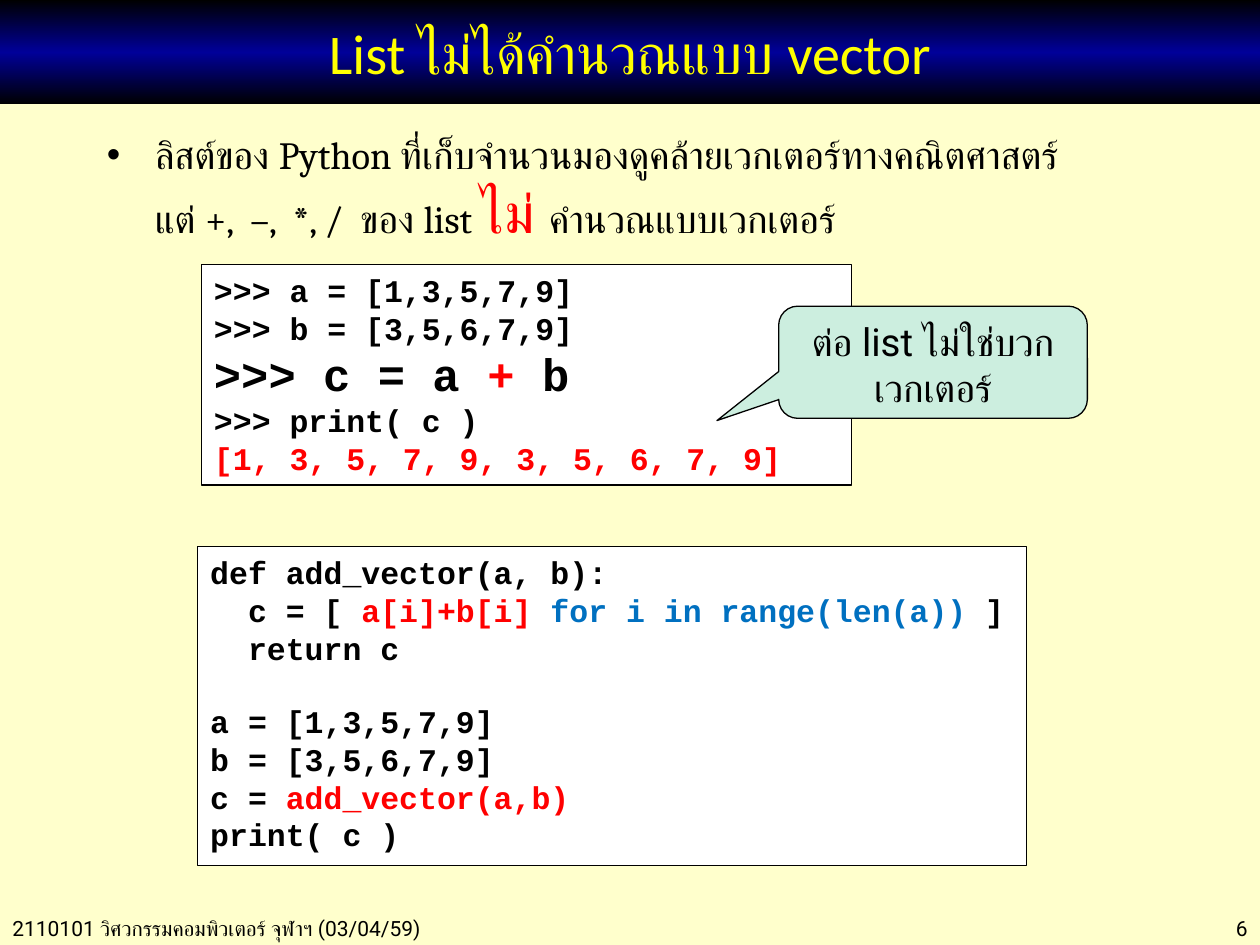
"""Slide showing that adding Python lists does not add them as vectors."""
from copy import deepcopy

from lxml import etree
from pptx import Presentation
from pptx.dml.color import RGBColor
from pptx.enum.shapes import MSO_SHAPE
from pptx.enum.text import MSO_ANCHOR, PP_ALIGN
from pptx.util import Inches, Pt

LEFT, CENTER, RIGHT = PP_ALIGN.LEFT, PP_ALIGN.CENTER, PP_ALIGN.RIGHT
TOP, MIDDLE = MSO_ANCHOR.TOP, MSO_ANCHOR.MIDDLE
RECTANGLE = MSO_SHAPE.RECTANGLE
CALLOUT = MSO_SHAPE.ROUNDED_RECTANGULAR_CALLOUT

BLACK = RGBColor(0x00, 0x00, 0x00)
WHITE = RGBColor(0xFF, 0xFF, 0xFF)
CREAM = RGBColor(0xFF, 0xFF, 0xCC)
NAVY = RGBColor(0x00, 0x00, 0x99)
YELLOW = RGBColor(0xFF, 0xFF, 0x00)
RED = RGBColor(0xFF, 0x00, 0x00)
BLUE = RGBColor(0x00, 0x70, 0xC0)
MINT = RGBColor(0xCC, 0xEE, 0xDF)

WIDTH, HEIGHT = 10, 7.5
FOOTER_TOP, FOOTER_HEIGHT = 7.22, 0.3
CODE_SIZE, BIG_CODE_SIZE, CODE_LINE = 18, 26, 20.4

TITLE = [[("List ไม่ได้คำนวณแบบ vector", YELLOW, 32)]]
POINT = [[
    ("ลิสต์ของ Python ที่เก็บจำนวนมองดูคล้ายเวกเตอร์ทางคณิตศาสตร์\n"
     "แต่ +,  –,  *, /  ของ list ", BLACK, 22),
    ("ไม่ ", RED, 32),
    ("คำนวณแบบเวกเตอร์", BLACK, 22),
]]
CALLOUT_NOTE = [[("ต่อ list ไม่ใช่บวกเวกเตอร์", BLACK, 22)]]
COURSE = [[("2110101 วิศวกรรมคอมพิวเตอร์ จุฬาฯ (03/04/59)", BLACK, 12)]]
PAGE = [[("6", BLACK, 12)]]

CONSOLE = [
    [(">>> a = [1,3,5,7,9]", BLACK, CODE_SIZE)],
    [(">>> b = [3,5,6,7,9]", BLACK, CODE_SIZE)],
    [(">>> c = a ", BLACK, BIG_CODE_SIZE), ("+", RED, BIG_CODE_SIZE),
     (" b", BLACK, BIG_CODE_SIZE)],
    [(">>> print( c )", BLACK, CODE_SIZE)],
    [("[1, 3, 5, 7, 9, 3, 5, 6, 7, 9]", RED, CODE_SIZE)],
]
FUNCTION = [
    [("def add_vector(a, b):", BLACK, CODE_SIZE)],
    [("  c = [ ", BLACK, CODE_SIZE), ("a[i]+b[i] ", RED, CODE_SIZE),
     ("for i in range(len(a))", BLUE, CODE_SIZE), (" ]", BLACK, CODE_SIZE)],
    [("  return c", BLACK, CODE_SIZE)],
]
USAGE = [
    [("a = [1,3,5,7,9]", BLACK, CODE_SIZE)],
    [("b = [3,5,6,7,9]", BLACK, CODE_SIZE)],
    [("c = ", BLACK, CODE_SIZE), ("add_vector(a,b)", RED, CODE_SIZE)],
    [("print( c )", BLACK, CODE_SIZE)],
]


def write(holder, lines, font, align=LEFT, anchor=TOP, bold=False):
    frame = holder.text_frame
    frame.word_wrap = True
    frame.vertical_anchor = anchor
    for number, line in enumerate(lines):
        paragraph = frame.add_paragraph() if number else frame.paragraphs[0]
        paragraph.alignment = align
        for text, color, size in line:
            for row, part in enumerate(text.split("\n")):
                if row:
                    paragraph.add_line_break()
                run = paragraph.add_run()
                run.text = part
                run.font.name = font
                run.font.size = Pt(size)
                run.font.bold = bold
                run.font.color.rgb = color
    return frame.paragraphs


def add_text(slide, box, lines, font, align=LEFT):
    holder = slide.shapes.add_textbox(*map(Inches, box))
    return write(holder, lines, font, align)


def add_panel(slide, kind, box, fill):
    panel = slide.shapes.add_shape(kind, *map(Inches, box))
    panel.shadow.inherit = False
    panel.fill.solid()
    panel.fill.fore_color.rgb = fill
    panel.line.color.rgb = BLACK
    panel.line.width = Pt(0.75)
    return panel


def add_title(slide):
    banner = add_panel(slide, RECTANGLE, (0, 0, WIDTH, 0.83), NAVY)
    banner.line.fill.background()
    banner.fill.gradient()
    banner.fill.gradient_angle = 90
    first = banner.fill.gradient_stops[0]._gs
    first.addnext(deepcopy(first))
    stops = zip(banner.fill.gradient_stops, (0, 0.5, 1), (BLACK, NAVY, BLACK))
    for stop, position, color in stops:
        stop.position = position
        stop.color.rgb = color
    write(banner, TITLE, "Calibri", CENTER, MIDDLE)


def add_bullet(paragraph, indent):
    properties = paragraph._p.get_or_add_pPr()
    properties.set("marL", str(Inches(indent)))
    properties.set("indent", str(-Inches(indent)))
    namespace = properties.nsmap["a"]
    etree.SubElement(properties, f"{{{namespace}}}buFont", typeface="Arial")
    etree.SubElement(properties, f"{{{namespace}}}buChar", char="•")


def main():
    deck = Presentation()
    deck.slide_width, deck.slide_height = Inches(WIDTH), Inches(HEIGHT)
    slide = deck.slides.add_slide(deck.slide_layouts[6])
    slide.background.fill.solid()
    slide.background.fill.fore_color.rgb = CREAM

    add_text(slide, (0, FOOTER_TOP, 3.9, FOOTER_HEIGHT), COURSE, "Roboto")
    add_text(slide, (WIDTH - 1.38, FOOTER_TOP, 1.38, FOOTER_HEIGHT),
             PAGE, "Roboto", RIGHT)
    add_title(slide)
    point = add_text(slide, (0.75, 0.99, 8.95, 5.58), POINT, "Cambria")
    add_bullet(point[0], 0.38)

    console = add_panel(slide, RECTANGLE, (1.6, 2.1, 5.16, 1.75), WHITE)
    write(console, CONSOLE, "Courier New", bold=True)

    callout = add_panel(slide, CALLOUT, (6.18, 2.43, 2.45, 0.89), MINT)
    for index, value in enumerate((-0.7, 0.52, 0.17)):
        callout.adjustments[index] = value
    write(callout, CALLOUT_NOTE, "Roboto", CENTER)

    program = add_panel(slide, RECTANGLE, (1.57, 4.34, 6.58, 2.53), WHITE)
    code = write(program, FUNCTION + USAGE, "Courier New", bold=True)
    code[len(FUNCTION)].space_before = Pt(CODE_LINE)

    deck.save("out.pptx")


if __name__ == "__main__":
    main()
